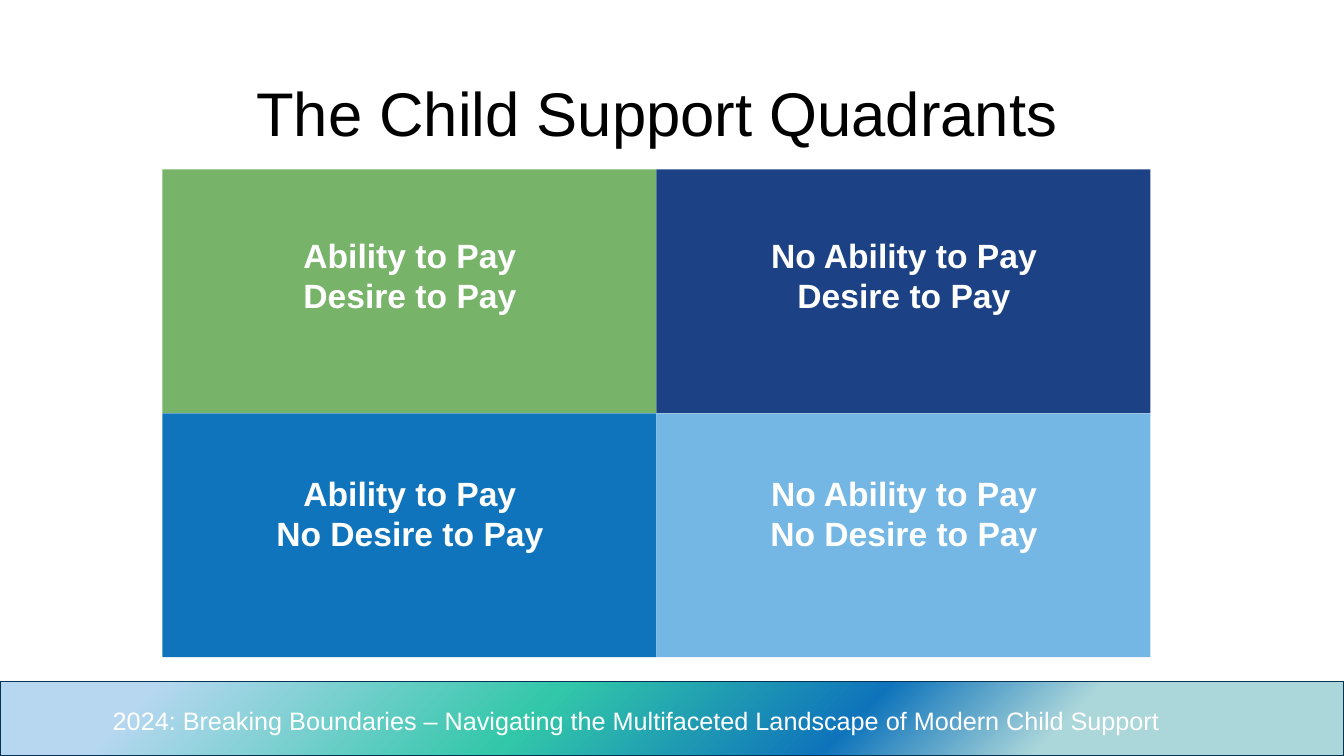
from lxml.etree import SubElement
from pptx import Presentation
from pptx.dml.color import RGBColor
from pptx.enum.shapes import MSO_SHAPE
from pptx.enum.text import MSO_ANCHOR, MSO_AUTO_SIZE, PP_ALIGN
from pptx.oxml.ns import qn
from pptx.util import Inches, Pt

COLORS = {
    "white": "FFFFFF",
    "black": "000000",
    "green": "77B368",
    "navy": "1C4285",
    "blue": "0F74BB",
    "sky": "74B7E4",
    "outline": "073352",
    "pale_blue": "B7D7F1",
    "teal": "32C7A9",
    "pale_teal": "ABD6DA",
}


def rgb(name):
    return RGBColor.from_string(COLORS[name])


def write_text(frame, text, size=24, color="white", bold=False,
               align=PP_ALIGN.LEFT, anchor=MSO_ANCHOR.TOP, spacing=None):
    """Fill a text frame, one paragraph per line of text."""
    frame.word_wrap = True
    frame.vertical_anchor = anchor
    for index, line in enumerate(text.split("\n")):
        paragraph = frame.paragraphs[0] if index == 0 else frame.add_paragraph()
        paragraph.alignment = align
        paragraph.line_spacing = spacing
        run = paragraph.add_run()
        run.text = line
        run.font.name = "Arial"
        run.font.size = Pt(size)
        run.font.bold = bold
        run.font.color.rgb = rgb(color)


class SlideBuilder:
    def __init__(self, slide):
        self.slide = slide

    def title(self, text, left, top, width, height):
        title = self.slide.shapes.title
        title.left, title.top = Inches(left), Inches(top)
        title.width, title.height = Inches(width), Inches(height)
        write_text(title.text_frame, text, size=44, color="black",
                   align=PP_ALIGN.CENTER, anchor=MSO_ANCHOR.MIDDLE, spacing=0.9)

    def rectangle(self, shapes, left, top, width, height, fill=None):
        rectangle = shapes.add_shape(MSO_SHAPE.RECTANGLE, Inches(left), Inches(top),
                                     Inches(width), Inches(height))
        rectangle.shadow.inherit = False
        rectangle.line.fill.background()
        if fill:
            rectangle.fill.solid()
            rectangle.fill.fore_color.rgb = rgb(fill)
        return rectangle

    def gradient_band(self, left, top, width, height, stops, outline):
        band = self.rectangle(self.slide.shapes, left, top, width, height)
        band.line.color.rgb = rgb(outline)
        band.line.width = Pt(1)
        band.fill.gradient()
        band.fill.gradient_angle = 315
        # Replace the two default stops
        stop_list = band._element.spPr.find(".//" + qn("a:gsLst"))
        for stop in list(stop_list):
            stop_list.remove(stop)
        for percent, color in stops:
            stop = SubElement(stop_list, qn("a:gs"), pos=str(percent * 1000))
            SubElement(stop, qn("a:srgbClr"), val=COLORS[color])

    def label(self, shapes, text, left, top, width, height, **style):
        label = shapes.add_textbox(Inches(left), Inches(top),
                                   Inches(width), Inches(height))
        write_text(label.text_frame, text, **style)
        label.text_frame.auto_size = MSO_AUTO_SIZE.SHAPE_TO_FIT_TEXT

    def quadrants(self, rows, left, top, width, height, label_tops):
        group = self.slide.shapes.add_group_shape().shapes
        cells = [(row, column, *cell) for row, cells in enumerate(rows)
                 for column, cell in enumerate(cells)]
        for row, column, color, _ in cells:
            self.rectangle(group, left + column * width, top + row * height,
                           width, height, color)
        for row, column, _, text in cells:
            self.label(group, text, left + column * width + 0.48, label_tops[row],
                       3.95, 1.67, bold=True, align=PP_ALIGN.CENTER)


def main():
    presentation = Presentation()
    presentation.slide_width = Inches(13.33)
    presentation.slide_height = Inches(7.5)
    builder = SlideBuilder(presentation.slides.add_slide(presentation.slide_layouts[5]))

    # Footer band
    builder.gradient_band(
        0, 6.76, 13.33, 0.74, outline="outline",
        stops=[(11, "pale_blue"), (40, "teal"), (63, "blue"), (78, "pale_teal")])
    builder.label(
        builder.slide.shapes,
        "2024: Breaking Boundaries – Navigating the Multifaceted Landscape "
        "of Modern Child Support",
        1.02, 6.95, 10.9, 0.4, size=18)

    # Title
    builder.title("The Child Support Quadrants", 0.77, 0.43, 11.5, 1.45)

    # Ability runs across, desire runs down
    builder.quadrants(
        [[("green", "Ability to Pay\nDesire to Pay"),
          ("navy", "No Ability to Pay\nDesire to Pay")],
         [("blue", "Ability to Pay\nNo Desire to Pay"),
          ("sky", "No Ability to Pay\nNo Desire to Pay")]],
        left=1.61, top=1.68, width=4.9, height=2.42, label_tops=[2.28, 4.64])

    presentation.save("out.pptx")


if __name__ == "__main__":
    main()
